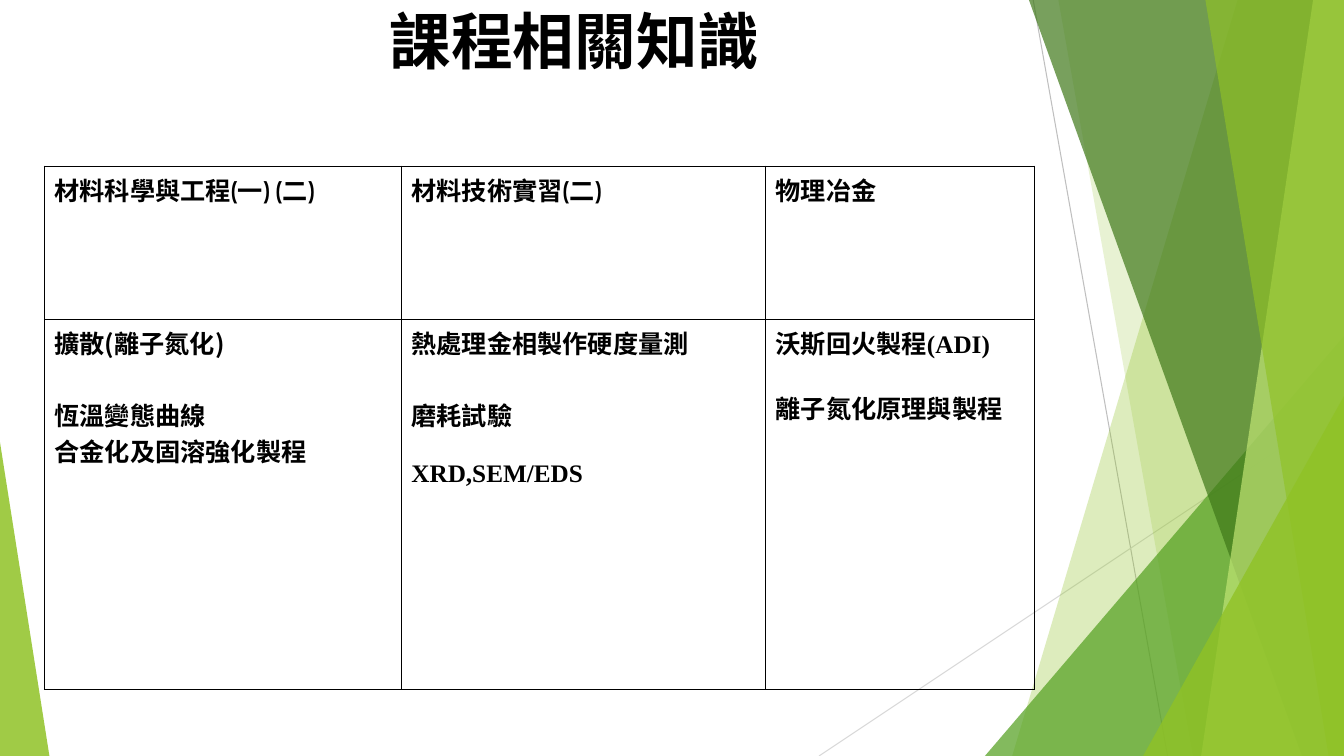
from lxml import etree
from pptx import Presentation
from pptx import util as u
from pptx.dml.color import RGBColor
from pptx.enum import shapes, text
from pptx.oxml import ns

BLACK = RGBColor(0x00, 0x00, 0x00)
GREY = RGBColor(0xBF, 0xBF, 0xBF)
PALE_GREY = RGBColor(0xD9, 0xD9, 0xD9)
LIME = RGBColor(0x90, 0xC2, 0x26)
LEAF = RGBColor(0x54, 0xA0, 0x21)
FOREST = RGBColor(0x3F, 0x78, 0x19)
MINT = RGBColor(0xC0, 0xE4, 0x74)

WIDTH, HEIGHT = 960, 540
SANS, CABIN, SERIF = "Noto Sans CJK SC", "Cabin", "Times New Roman"


def add_xml(parent, tag, **values):
    child = etree.SubElement(parent, ns.qn(tag))
    for name, value in values.items():
        child.set(name, str(value))
    return child


class SlideBuilder:
    """Holds the current slide and the text style shared by its elements."""

    font_format = {"bold": True, "size": u.Pt(18)}

    def __init__(self, page):
        self.page = page

    def line(self, start, end, color):
        line = self.page.shapes.add_connector(
            shapes.MSO_CONNECTOR.STRAIGHT, *map(u.Pt, start + end))
        line.line.color.rgb = color
        line.line.width = u.Pt(0.75)
        add_xml(line._element.spPr, "a:effectLst")

    def paint(self, shape, color, opacity):
        shape.shadow.inherit = False
        shape.line.fill.background()
        shape.fill.solid()
        shape.fill.fore_color.rgb = color
        srgb = shape._element.spPr.find(".//" + ns.qn("a:srgbClr"))
        add_xml(srgb, "a:alpha", val=opacity * 1000)

    def band(self, top_left, bottom_left, color, opacity):
        """Draws a full-height band from a slanted left edge to the right side."""
        outline = self.page.shapes.build_freeform(top_left, 0, scale=u.Pt(1))
        outline.add_line_segments(
            [(WIDTH, 0), (WIDTH, HEIGHT), (bottom_left, HEIGHT)], close=True)
        self.paint(outline.convert_to_shape(), color, opacity)

    def triangle(self, left, top, width, apex, color, opacity):
        """Draws a triangle that stands on the bottom edge."""
        shape = self.page.shapes.add_shape(
            shapes.MSO_SHAPE.ISOSCELES_TRIANGLE,
            *map(u.Pt, (left, top, width, HEIGHT - top)))
        shape.adjustments[0] = apex
        self.paint(shape, color, opacity)

    def span(self, para, words, font_name, **changes):
        span = para.add_run()
        span.text = words
        span.font.color.rgb = BLACK
        for name, value in {**self.font_format, "name": font_name, **changes}.items():
            setattr(span.font, name, value)
        add_xml(span._r.get_or_add_rPr(), "a:ea", typeface=SANS)

    def title(self, words, left, top, width, height):
        box = self.page.shapes.add_textbox(*map(u.Pt, (left, top, width, height)))
        frame_format = {"word_wrap": True, "margin_top": u.Pt(2),
                        "vertical_anchor": text.MSO_ANCHOR.TOP}
        for name, value in frame_format.items():
            setattr(box.text_frame, name, value)
        para = box.text_frame.paragraphs[0]
        para.alignment = text.PP_ALIGN.CENTER
        para.line_spacing = 0.9
        self.span(para, words, SERIF, size=u.Pt(44))

    def cell(self, cell, paragraphs):
        cell.fill.background()
        for index, (gap, spans) in enumerate(paragraphs):
            frame = cell.text_frame
            para = frame.add_paragraph() if index else frame.paragraphs[0]
            para.space_before = u.Pt(gap)
            for words, font_name in spans:
                self.span(para, words, font_name)
        properties = cell._tc.get_or_add_tcPr()
        for index, side in enumerate(("L", "R", "T", "B")):
            border = etree.Element(ns.qn(f"a:ln{side}"), w=str(u.Pt(1)))
            add_xml(add_xml(border, "a:solidFill"), "a:srgbClr", val=BLACK)
            properties.insert(index, border)

    def table(self, left, top, widths, heights, rows):
        frame = self.page.shapes.add_table(
            len(heights), len(widths),
            *map(u.Pt, (left, top, sum(widths), sum(heights))))
        table = frame.table
        table.first_row = table.horz_banding = False
        for column, width in zip(table.columns, widths):
            column.width = u.Pt(width)
        for row, height, contents in zip(table.rows, heights, rows):
            row.height = u.Pt(height)
            for cell, paragraphs in zip(row.cells, contents):
                self.cell(cell, paragraphs)


# Each cell lists its paragraphs as (space before, [(words, font), ...]).
COURSES = [
    [[(0, [(name, CABIN)])]
     for name in ("材料科學與工程(一) (二)", "材料技術實習(二)", "物理冶金")],
    [
        [(0, [("擴散(離子氮化)", SANS)]),
         (25, [("恆溫變態曲線", SANS)]),
         (0, [("合金化及固溶強化製程", SANS)])],
        [(0, [("熱處理金相製作硬度量測", SANS)]),
         (25, [("磨耗試驗", SANS)]),
         (20, [("XRD,SEM/EDS", SERIF)])],
        [(0, [("沃斯回火製程", CABIN), ("(ADI)", SERIF)]),
         (20, [("離子氮化原理與製程", CABIN)])],
    ],
]


def main():
    deck = Presentation()
    deck.slide_width, deck.slide_height = u.Pt(WIDTH), u.Pt(HEIGHT)
    builder = SlideBuilder(deck.slides.add_slide(deck.slide_layouts[6]))

    builder.line((738, 0), (834, HEIGHT), GREY)
    builder.line((WIDTH, 290), (585, HEIGHT), PALE_GREY)
    builder.band(884, 723, LIME, 30)
    builder.band(756, 852, LIME, 20)
    builder.triangle(703.5, 240, 256.5, 1, LEAF, 72)
    builder.band(735, 929.5, FOREST, 70)
    builder.band(938, 858, MINT, 70)
    builder.band(861, 949, LIME, 65)
    builder.triangle(816.5, 283, 143.5, 1, LIME, 80)
    builder.triangle(0, 316, 35.3, 0, LIME, 85)

    builder.title("課程相關知識", 20, 5.8, 781, 103.7)
    builder.table(31.7, 118.8, (255, 260.3, 192), (109.4, 264.2), COURSES)
    deck.save("out.pptx")


if __name__ == "__main__":
    main()
